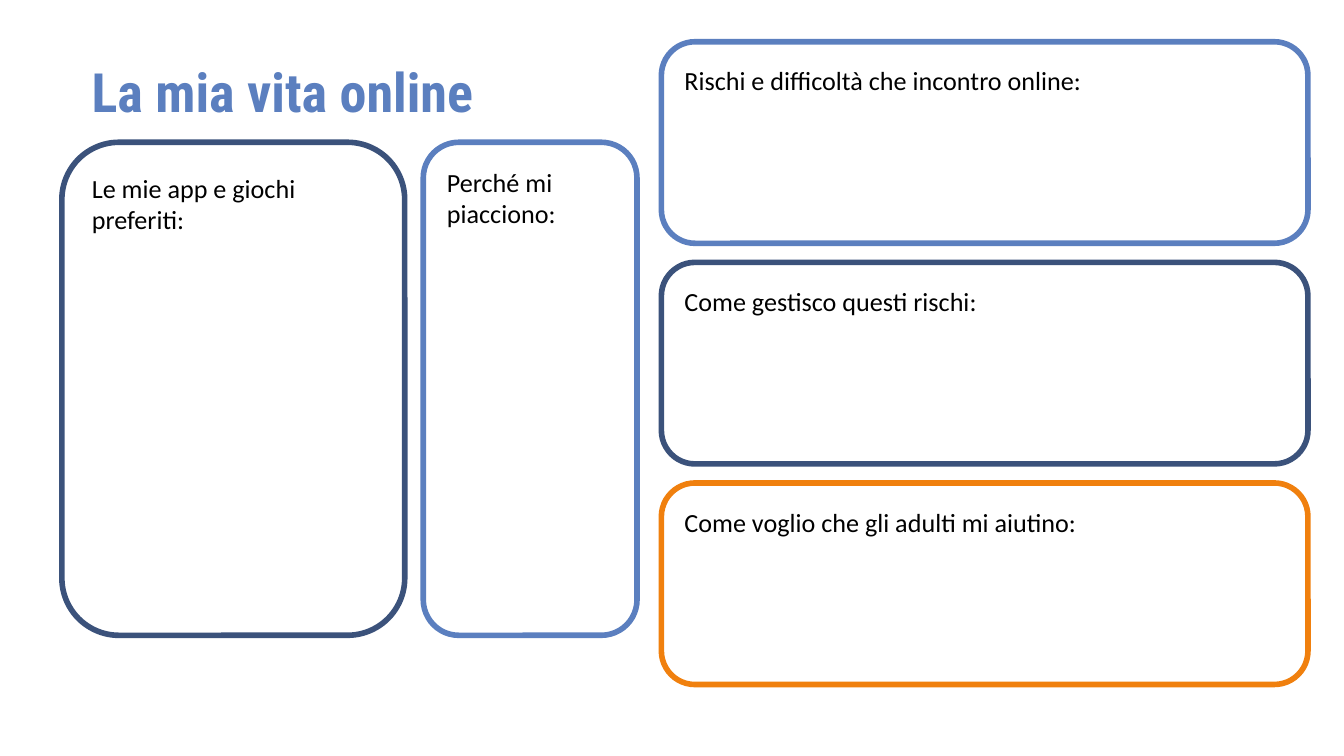
from pptx import Presentation
from pptx import util as u
from pptx.dml.color import RGBColor
from pptx.enum import shapes, text

COLORS = {"blue": "5B7FBF", "navy": "3B527B", "orange": "F0800E", "black": "000000"}


class Worksheet:
    title_font = {"name": "Roboto Condensed", "size": u.Pt(29), "bold": True}
    body_font = {"name": "Calibri", "size": u.Pt(14), "bold": False}

    def __init__(self, prs):
        self.s = prs.slides.add_slide(prs.slide_layouts[5])

    def color(self, name):
        return RGBColor.from_string(COLORS[name])

    def label(self, sp, words, font, color, inset, anchor):
        tf = sp.text_frame
        frame = {
            "word_wrap": True,
            "auto_size": text.MSO_AUTO_SIZE.NONE,
            "vertical_anchor": anchor,
            "margin_left": u.Cm(inset[0]),
            "margin_right": u.Cm(inset[0]),
            "margin_top": u.Cm(inset[1]),
            "margin_bottom": u.Cm(inset[1]),
        }
        for key, value in frame.items():
            setattr(tf, key, value)
        p = tf.paragraphs[0]
        p.alignment = text.PP_ALIGN.LEFT
        r = p.add_run()
        r.text = words
        for key, value in font.items():
            setattr(r.font, key, value)
        r.font.color.rgb = self.color(color)
        return p

    def title(self, words, left, top, width, height):
        sp = self.s.shapes.title
        place = {"left": left, "top": top, "width": width, "height": height}
        for key, value in place.items():
            setattr(sp, key, u.Cm(value))
        p = self.label(sp, words, self.title_font, "blue", (0.18, 0.1), text.MSO_ANCHOR.MIDDLE)
        p.line_spacing = 0.9

    def box(self, words, color, *place):
        sp = self.s.shapes.add_shape(
            shapes.MSO_SHAPE.ROUNDED_RECTANGLE, *(u.Cm(v) for v in place)
        )
        sp.shadow.inherit = False
        sp.fill.background()
        sp.line.color.rgb = self.color(color)
        sp.line.width = u.Pt(3)
        self.label(sp, words, self.body_font, "black", (0.25, 0.25), text.MSO_ANCHOR.TOP)


def main():
    prs = Presentation()
    prs.slide_width, prs.slide_height = u.Cm(25.4), u.Cm(14.29)
    sheet = Worksheet(prs)
    sheet.title("La mia vita online", 1.55, 0.94, 22.28, 1.7)

    columns = [
        ("Le mie app e giochi preferiti:", "navy", 1.17, 6.48),
        ("Perché mi piacciono:", "blue", 8.0, 4.04),
    ]
    for words, color, left, width in columns:
        sheet.box(words, color, left, 2.69, width, 9.32)

    rows = [
        ("Rischi e difficoltà che incontro online:", "blue"),
        ("Come gestisco questi rischi:", "navy"),
        ("Come voglio che gli adulti mi aiutino:", "orange"),
    ]
    for i, (words, color) in enumerate(rows):
        sheet.box(words, color, 12.5, 0.79 + i * 4.17, 12.22, 3.81)

    prs.save("out.pptx")


if __name__ == "__main__":
    main()
